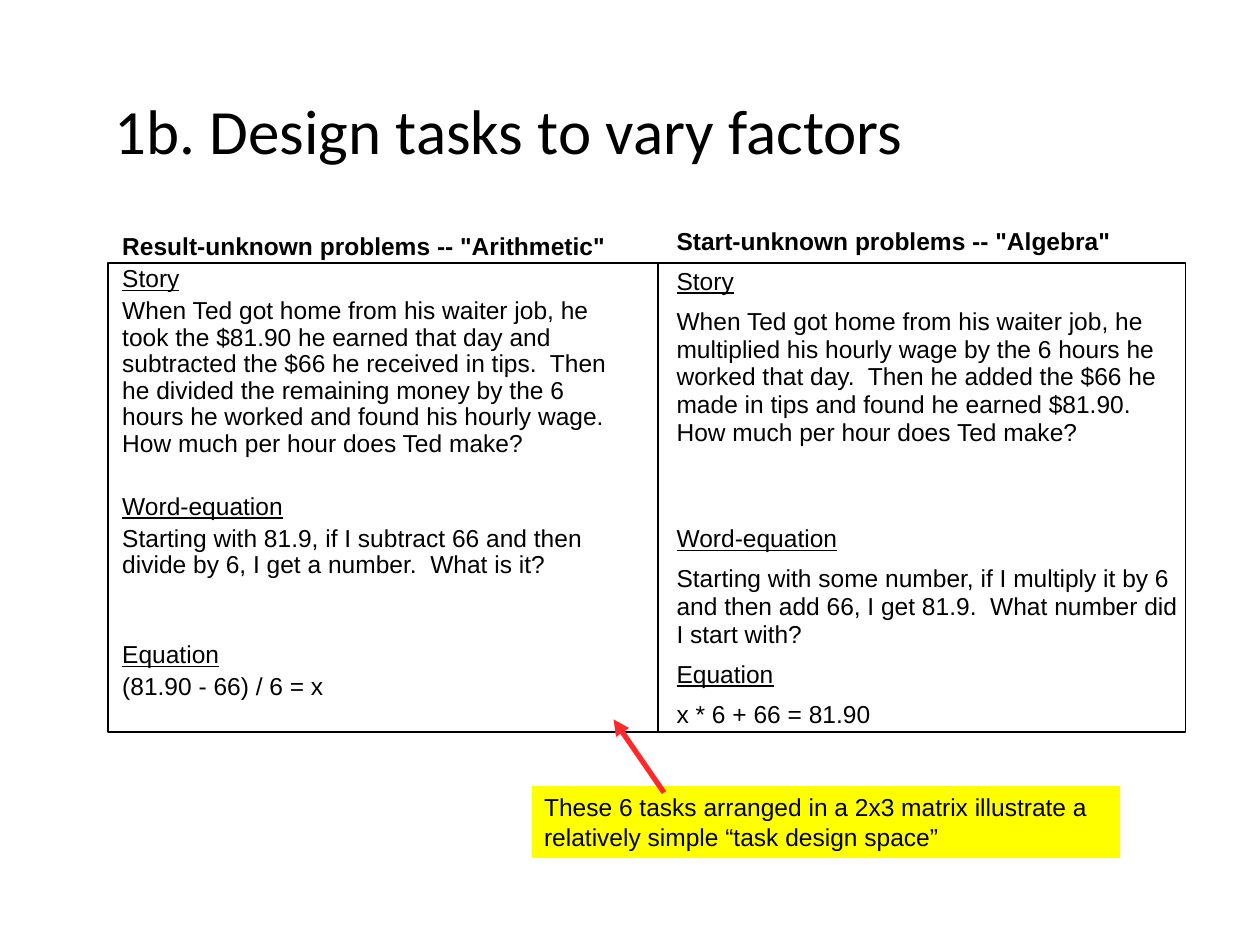
"""Build a slide that sets arithmetic and algebra tasks side by side."""
from lxml.etree import SubElement
from pptx import Presentation
from pptx.dml.color import RGBColor
from pptx.enum.shapes import MSO_CONNECTOR, MSO_SHAPE
from pptx.enum.text import MSO_ANCHOR, MSO_AUTO_SIZE, PP_ALIGN
from pptx.oxml.ns import qn
from pptx.util import Inches, Pt

BLACK = RGBColor(0x00, 0x00, 0x00)
YELLOW = RGBColor(0xFF, 0xFF, 0x00)
RED = RGBColor(0xFF, 0x29, 0x29)

deck = Presentation()
deck.slide_width, deck.slide_height = Inches(10), Inches(7.5)
slide = deck.slides.add_slide(deck.slide_layouts[1])


def percent(*lengths):
    """Turn alternating shares of the slide's width and height into lengths."""
    sides = (deck.slide_width, deck.slide_height) * 2
    return [int(side * share / 100) for side, share in zip(sides, lengths)]


def write(paragraph, wording, size=14, font="Arial"):
    """Add one black run to a left-aligned paragraph."""
    paragraph.alignment = PP_ALIGN.LEFT
    run = paragraph.add_run()
    run.text = wording
    run.font.name, run.font.size = font, Pt(size)
    run.font.color.rgb = BLACK
    return run


title = slide.shapes.title
title.left, title.top, title.width, title.height = percent(8.1, 6.8, 85.8, 13.73)
title.text_frame.vertical_anchor = MSO_ANCHOR.MIDDLE
title.text_frame.auto_size = MSO_AUTO_SIZE.NONE
write(title.text_frame.paragraphs[0], "1b. Design tasks to vary factors", 36, "Calibri")

algebra = slide.shapes.add_textbox(*percent(53.1, 23.73, 41.2, 51.73))
arithmetic = slide.placeholders[1]
arithmetic.left, arithmetic.top, arithmetic.width, arithmetic.height = percent(8.7, 24.13, 42, 50)

algebra_tasks = [
    ("Story", 7.2, "When Ted got home from his waiter job, he multiplied his hourly wage "
     "by the 6 hours he worked that day.  Then he added the $66 he made in tips and "
     "found he earned $81.90.  How much per hour does Ted make?"),
    ("Word-equation", 45, "Starting with some number, if I multiply it by 6 and then "
     "add 66, I get 81.9.  What number did I start with?"),
    ("Equation", 7.2, "x * 6 + 66 = 81.90"),
]
arithmetic_tasks = [
    ("Story", 3.2, "When Ted got home from his waiter job, he took the $81.90 he earned "
     "that day and subtracted the $66 he received in tips.  Then he divided the "
     "remaining money by the 6 hours he worked and found his hourly wage.  "
     "How much per hour does Ted make?"),
    ("Word-equation", 21, "Starting with 81.9, if I subtract 66 and then divide by 6, "
     "I get a number.  What is it?"),
    ("Equation", 36, "(81.90 - 66) / 6 = x"),
]

columns = [
    (algebra, 'Start-unknown problems -- "Algebra"', algebra_tasks, 0.94, 7.2, 0.06, 0.03),
    (arithmetic, 'Result-unknown problems -- "Arithmetic"', arithmetic_tasks, 0.9, 3.2, 0.1, 0.05),
]
for column, heading, tasks, leading, gap, side_inset, end_inset in columns:
    frame = column.text_frame
    frame.word_wrap = True
    frame.auto_size = MSO_AUTO_SIZE.NONE
    frame.margin_left = frame.margin_right = Inches(side_inset)
    frame.margin_top = frame.margin_bottom = Inches(end_inset)
    write(frame.paragraphs[0], heading).font.bold = True
    for label, label_gap, problem in tasks:
        for wording, space, underlined in ((label, label_gap, True), (problem, gap, False)):
            paragraph = frame.add_paragraph()
            paragraph.space_before = Pt(space)
            write(paragraph, wording).font.underline = underlined
    for paragraph in frame.paragraphs:
        paragraph.line_spacing = leading
        properties = paragraph._p.get_or_add_pPr()
        properties.set("marL", "0")
        properties.set("indent", "0")
        SubElement(properties, qn("a:buNone"))
    frame.paragraphs[0].space_before = Pt(0)

matrix = slide.shapes.add_shape(MSO_SHAPE.RECTANGLE, *percent(8.6, 27.87, 85.5, 49.6))
matrix.shadow.inherit = False
matrix.fill.background()
matrix.line.color.rgb, matrix.line.width = BLACK, Pt(1)

divider = slide.shapes.add_connector(MSO_CONNECTOR.STRAIGHT, *percent(52.2, 27.87, 52.2, 77.47))
divider.line.color.rgb, divider.line.width = BLACK, Pt(1)

callout = slide.shapes.add_group_shape()
remark = callout.shapes.add_shape(MSO_SHAPE.RECTANGLE, *percent(42.2, 83.2, 46.7, 7.6))
remark.shadow.inherit = False
remark.fill.solid()
remark.fill.fore_color.rgb = YELLOW
remark.line.fill.background()
remark.text_frame.word_wrap = True
remark.text_frame.vertical_anchor = MSO_ANCHOR.TOP
write(remark.text_frame.paragraphs[0],
      "These 6 tasks arranged in a 2x3 matrix illustrate a relatively simple “task design space”")

pointer = callout.shapes.add_connector(MSO_CONNECTOR.STRAIGHT, *percent(52.7, 83.87, 48.7, 76.13))
pointer.line.color.rgb, pointer.line.width = RED, Pt(3)
SubElement(pointer.line._get_or_add_ln(), qn("a:tailEnd"), type="triangle")

for line in (divider, pointer):
    SubElement(line._element.spPr, qn("a:effectLst"))

deck.save("out.pptx")
